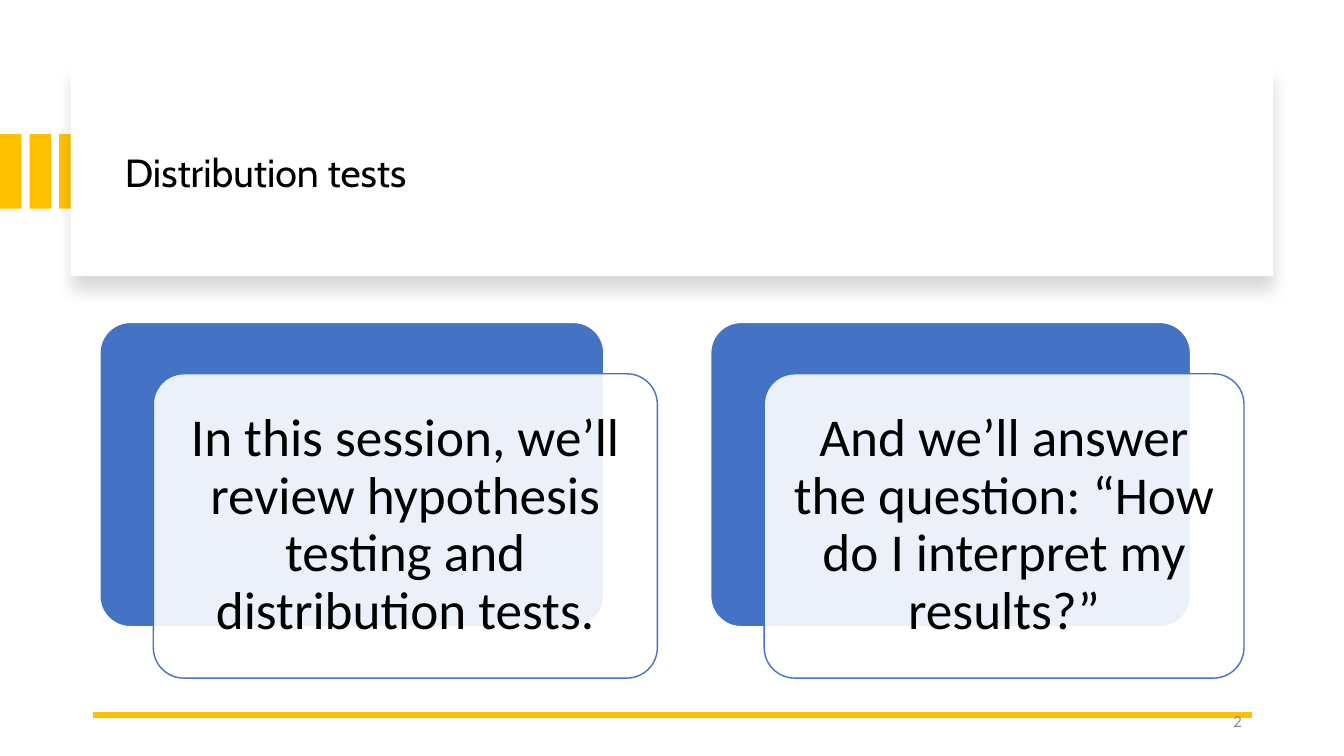
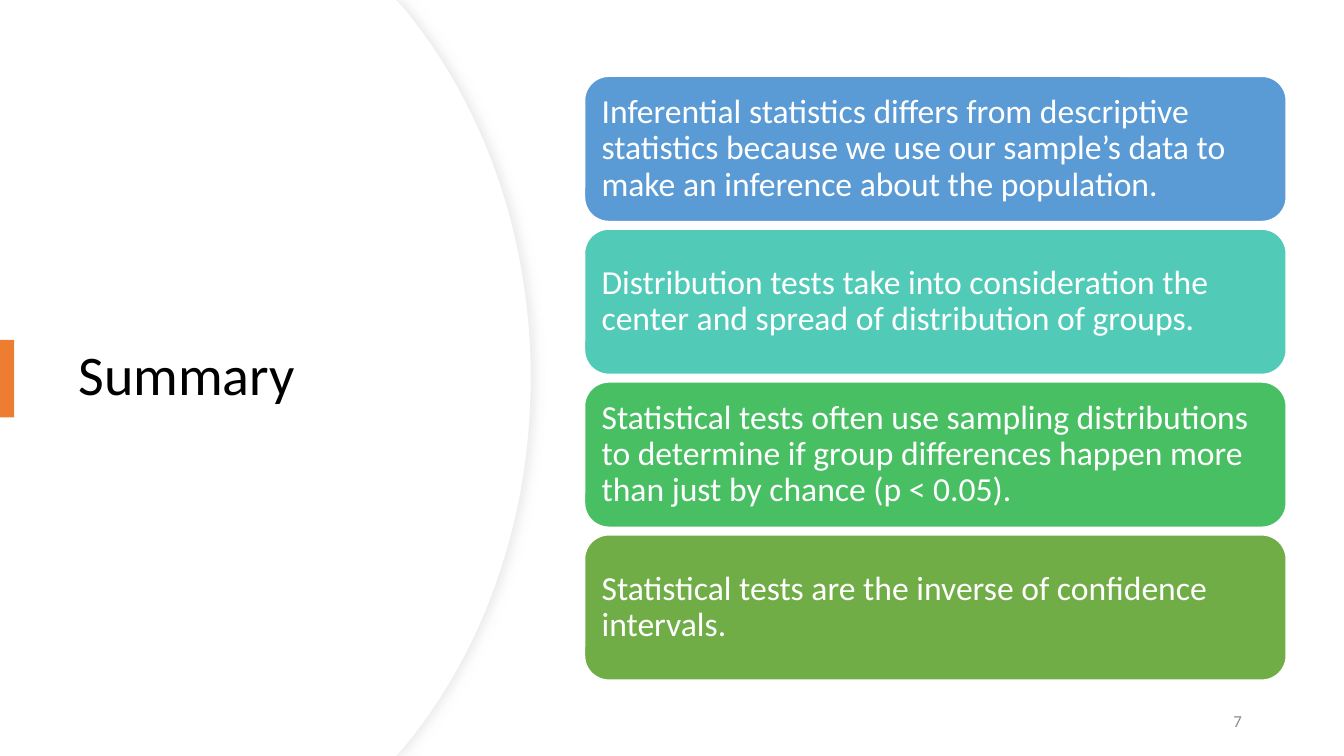
from lxml import etree
from pptx import Presentation
from pptx.dml.color import RGBColor
from pptx.enum.shapes import MSO_CONNECTOR, MSO_SHAPE
from pptx.enum.text import MSO_ANCHOR, PP_ALIGN
from pptx.oxml.ns import qn
from pptx.util import Inches, Pt

GOLD, BLUE, ORANGE = "FFC000", "4472C4", "ED7D31"
WHITE, BLACK, GREY = "FFFFFF", "000000", "8C8C8C"

prs = Presentation()
prs.slide_width, prs.slide_height = Inches(13.33), Inches(7.5)
# One column and one row are each a hundredth of the slide
col, row = prs.slide_width / 100, prs.slide_height / 100
blank = prs.slide_layouts[6]


def place(s, kind, x, y, w, h, text="", size=12, color=BLACK,
          font="Calibri", align=PP_ALIGN.LEFT, spacing=0.9, inset=0.1):
    """Add a preset shape, or a text box if kind is None, on the grid."""
    box = [round(v) for v in (x * col, y * row, w * col, h * row)]
    sp = s.shapes.add_shape(kind, *box) if kind else s.shapes.add_textbox(*box)
    if text:
        tf = sp.text_frame
        tf.word_wrap = True
        tf.vertical_anchor = MSO_ANCHOR.MIDDLE
        tf.margin_left = tf.margin_right = Inches(inset)
        tf.margin_top = tf.margin_bottom = Inches(inset if kind else 0.05)
        p = tf.paragraphs[0]
        p.text, p.alignment, p.line_spacing = text, align, spacing
        r = p.runs[0]
        r.font.size, r.font.name = Pt(size), font
        r.font.color.rgb = RGBColor.from_string(color)
    return sp


def paint(sp, fill, line=None, width=1, opacity=100, shadow=None):
    """Set fill and line; shadow is colour, opacity, blur, distance, angle."""
    sp.fill.solid()
    sp.fill.fore_color.rgb = RGBColor.from_string(fill)
    if opacity < 100:
        clr = sp._element.spPr.find(qn("a:solidFill"))[0]
        etree.SubElement(clr, qn("a:alpha"), val=str(opacity * 1000))
    if line:
        sp.line.color.rgb = RGBColor.from_string(line)
        sp.line.width = Pt(width)
    else:
        sp.line.fill.background()
    sp.shadow.inherit = False
    if shadow:
        color, alpha, blur, dist, angle = shadow
        effects = sp._element.spPr.find(qn("a:effectLst"))
        outer = etree.SubElement(
            effects, qn("a:outerShdw"), blurRad=str(Pt(blur)),
            dist=str(Pt(dist)), dir=str(angle * 60000), rotWithShape="0")
        clr = etree.SubElement(outer, qn("a:srgbClr"), val=color)
        etree.SubElement(clr, qn("a:alpha"), val=str(alpha * 1000))


# Slide 1: gold bars, title card and rule
s = prs.slides.add_slide(blank)
for i in range(3):
    paint(place(s, MSO_SHAPE.RECTANGLE, 2.2 * i, 17.75, 1.6, 9.85), GOLD)
card = place(s, MSO_SHAPE.RECTANGLE, 5.25, 8.9, 89.5, 27.6)
paint(card, WHITE, shadow=(BLACK, 15, 11, 10, 90))
place(s, None, 8.55, 11.85, 83.5, 22.65, "Distribution tests", 28, font="Cabin")
rule_y = round(94.55 * row)
rule = s.shapes.add_connector(
    MSO_CONNECTOR.STRAIGHT, round(93.15 * col), rule_y, round(6.9 * col), rule_y)
rule.line.color.rgb = RGBColor.from_string(GOLD)
rule.line.width = Pt(4.5)
etree.SubElement(rule._element.spPr, qn("a:effectLst"))

# Slide 1: two statements, each on a blue backing
statements = [
    (7.43, 37.5, "In this session, we’ll review hypothesis testing and distribution tests."),
    (52.88, 35.7, "And we’ll answer the question: “How do I interpret my results?”"),
]
for x, w, text in statements:
    back = place(s, MSO_SHAPE.ROUNDED_RECTANGLE, x, 42.65, w, 40.25)
    front = place(s, MSO_SHAPE.ROUNDED_RECTANGLE, x + 3.98, 49.45, w, 40.25,
                  text, 38, align=PP_ALIGN.CENTER, inset=0.16)
    back.adjustments[0] = front.adjustments[0] = 0.1
    paint(back, BLUE, WHITE)
    paint(front, WHITE, BLUE, opacity=90)

# Slide 2: white panel with a curved edge, outlined and then plain
s = prs.slides.add_slide(blank)
curve = [(30.08, 1.07), (35.93, 13.6), (39.53, 30.93), (39.53, 50)]
steps = 24
upper = []
for i in range(steps + 1):
    t = i / steps
    weights = ((1 - t) ** 3, 3 * t * (1 - t) ** 2, 3 * t * t * (1 - t), t ** 3)
    upper.append([sum(k * c[axis] for k, c in zip(weights, curve)) for axis in (0, 1)])
lower = [(x, 100 - y) for x, y in reversed(upper[:-1])]
edge = [(29.55, 0), *upper, *lower, (29.55, 100)]
for shift, style in [
    (0, dict(line="EFEFEF", width=0.75, shadow=("D9D9D9", 50, 7, 3, 0))),
    (0.08, {}),
]:
    fb = s.shapes.build_freeform(0, 0)
    points = [((x - shift) * col, y * row) for x, y in edge]
    fb.add_line_segments(points + [(0, 100 * row)], close=True)
    paint(fb.convert_to_shape(), WHITE, **style)

# Slide 2: title and its marker
place(s, None, 5.1, 16.95, 29.55, 66, "Summary", 40)
paint(place(s, MSO_SHAPE.RECTANGLE, 0, 44.95, 1.05, 10.25), ORANGE)

# Slide 2: summary points
points = [
    ("5B9BD5", "Inferential statistics differs from descriptive statistics because "
               "we use our sample’s data to make an inference about the population."),
    ("52CAB8", "Distribution tests take into consideration the center and spread "
               "of distribution of groups."),
    ("49BF64", "Statistical tests often use sampling distributions to determine if "
               "group differences happen more than just by chance (p < 0.05)."),
    ("70AD47", "Statistical tests are the inverse of confidence intervals."),
]
for i, (color, text) in enumerate(points):
    sp = place(s, MSO_SHAPE.ROUNDED_RECTANGLE, 43.5, 10.1 + 20.22 * i, 52.2, 19.2,
               text, 24, WHITE)
    paint(sp, color, WHITE)

# Slide numbers
for s, number in zip(prs.slides, ("2", "7")):
    place(s, None, 70.65, 92.65, 22.5, 5.35, number, 12, GREY,
          align=PP_ALIGN.RIGHT, spacing=1.0)

prs.save("out.pptx")
